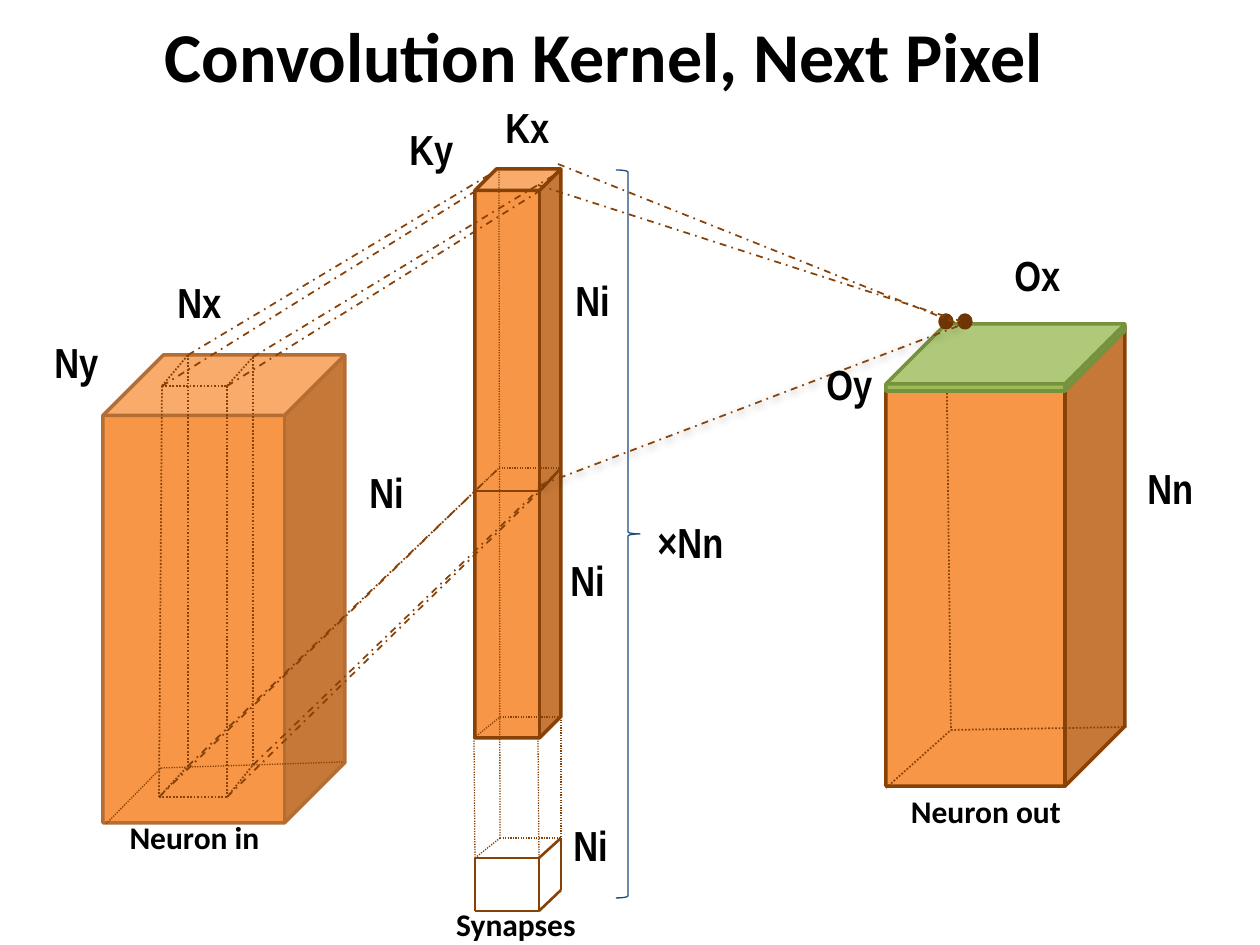
from itertools import pairwise

from lxml.etree import SubElement
from pptx import Presentation
from pptx.dml.color import RGBColor
from pptx.enum.dml import MSO_LINE_DASH_STYLE as DASH
from pptx.enum.shapes import MSO_CONNECTOR, MSO_SHAPE as SHAPE
from pptx.enum.text import MSO_ANCHOR, MSO_AUTO_SIZE, PP_ALIGN
from pptx.oxml.ns import qn
from pptx.util import Pt

PX = 914400 / 126
BROWN, ORANGE, BLACK = "884106", "F79646", "000000"

# kind, box (left, top, width, height), fill, line colour, line width, adjustments
SOLIDS = [
    (SHAPE.CUBE, (103, 355, 242, 468), ORANGE, "B46D33", 2, [0.25]),
    (SHAPE.CUBE, (475, 169, 86, 569), ORANGE, BROWN, 2, [0.25]),
    (SHAPE.RIGHT_BRACE, (616, 170, 24, 728), None, "1F497D", 0.75, [0.083, 0.5]),
    (SHAPE.CUBE, (886, 326, 239, 460), ORANGE, BROWN, 2, [0.25]),
]
OUTPUT_LAYER = (SHAPE.CUBE, (886, 324, 239, 67), "9BBB59", "76923C", 2, [0.895])
PIXELS = [(SHAPE.FLOWCHART_CONNECTOR, (left, 316, 10, 11), "6F3505", "6F3505", 3, [])
          for left in (941, 960)]

# Corners run front left, front right, back right, back left
FIELD_TOP = [(162, 386), (227, 386), (253, 357), (188, 355)]
FIELD_BOTTOM = [(159, 797), (227, 797), (253, 765), (188, 766)]
KERNEL_TOP = [(474, 192), (538, 192), (561, 171), (499, 169)]
KERNEL_SPLIT = [(475, 491), (540, 491), (561, 468), (499, 468)]
KERNEL_BOTTOM = [(474, 738), (538, 738), (561, 717), (500, 717)]
LAST_TOP = [(475, 858), (539, 858), (561, 838), (500, 838)]
LAST_BOTTOM = [(475, 911), (539, 911), (561, 890)]


def front(corners):
    return corners[:3]


def back(corners):
    return [corners[0], corners[3], corners[2]]


# line width, dash, chains of points
LINES = [
    (0.75, DASH.ROUND_DOT, [
        [(106, 824), (161, 768), (343, 762)],
        back(KERNEL_SPLIT), back(KERNEL_BOTTOM), back(LAST_TOP),
        [KERNEL_TOP[3], LAST_TOP[3]],
        *zip(front(KERNEL_BOTTOM), front(LAST_TOP)),
    ]),
    (1, DASH.ROUND_DOT, [
        front(FIELD_TOP), FIELD_TOP[::3], front(FIELD_BOTTOM), FIELD_BOTTOM[::3],
        *zip(FIELD_TOP, FIELD_BOTTOM),
        [(946, 320), (951, 730)],
        [(886, 788), (951, 730), (1128, 727)],
    ]),
    (1, DASH.DASH_DOT, [
        *zip(FIELD_TOP, KERNEL_TOP),
        *zip(FIELD_BOTTOM, KERNEL_SPLIT),
    ]),
    (1.5, DASH.SOLID, [
        front(KERNEL_SPLIT), front(LAST_TOP), LAST_BOTTOM,
        *zip(front(LAST_TOP), LAST_BOTTOM),
    ]),
]
OUTPUT_RAYS = [[(558, 164), (961, 325)], [(538, 185), (960, 321)]]
SHADOWED_RAY = [(541, 485), (961, 325)]

# text, box, size
HEADINGS = [
    ("Neuron out", (897, 779, 178, 57), 18),
    ("Synapses", (431, 892, 170, 37), 18),
    ("Neuron in", (105, 805, 179, 48), 18),
    ("Convolution Kernel, Next Pixel", (120, 0, 968, 84), 40),
]
# text, left, top, width
DIMENSIONS = [
    ("Ny", 42, 330, 71), ("Nx", 165, 270, 71), ("Ni", 357, 460, 60),
    ("Ky", 397, 117, 71), ("Kx", 493, 95, 71), ("Ni", 563, 268, 60),
    ("Ni", 558, 548, 60), ("Ni", 561, 813, 60), ("×Nn", 645, 510, 92),
    ("Oy", 814, 352, 72), ("Ox", 1002, 243, 72), ("Nn", 1135, 456, 72),
]
DIMENSION_HEIGHT = 63


def emu(lengths):
    return [round(length * PX) for length in lengths]


def rgb(code):
    return RGBColor.from_string(code)


def add_solid(slide, kind, box, fill, line_color, line_width, adjustments):
    shape = slide.shapes.add_shape(kind, *emu(box))
    shape.shadow.inherit = False
    for index, value in enumerate(adjustments):
        shape.adjustments[index] = value
    if fill:
        shape.fill.solid()
        shape.fill.fore_color.rgb = rgb(fill)
    else:
        shape.fill.background()
    shape.line.color.rgb = rgb(line_color)
    shape.line.width = Pt(line_width)


def add_chain(slide, points, width, dash, shadow=False):
    """Join each point to the next with a straight line."""
    for start, end in pairwise(points):
        line = slide.shapes.add_connector(MSO_CONNECTOR.STRAIGHT, *emu(start + end))
        line.line.color.rgb = rgb(BROWN)
        line.line.width = Pt(width)
        line.line.dash_style = dash
        effects = SubElement(line._element.spPr, qn("a:effectLst"))
        if shadow:
            outer = SubElement(effects, qn("a:outerShdw"), blurRad=str(Pt(4.5)),
                               dist=str(Pt(1.5)), dir="5400000", rotWithShape="0")
            color = SubElement(outer, qn("a:srgbClr"), val=BLACK)
            SubElement(color, qn("a:alpha"), val="50000")


def add_text(slide, text, box, size, font_name, wrap):
    text_box = slide.shapes.add_textbox(*emu(box))
    frame = text_box.text_frame
    frame.text = text
    frame.word_wrap = wrap
    frame.vertical_anchor = MSO_ANCHOR.TOP
    paragraph = frame.paragraphs[0]
    font = paragraph.runs[0].font
    font.name, font.size, font.bold = font_name, Pt(size), True
    font.color.rgb = rgb(BLACK)
    return frame


def add_heading(slide, text, box, size):
    frame = add_text(slide, text, box, size, "Calibri", True)
    frame.margin_top = frame.margin_bottom = Pt(7.2)
    frame.paragraphs[0].alignment = PP_ALIGN.CENTER


def add_dimension(slide, text, left, top, width):
    box = (left, top, width, DIMENSION_HEIGHT)
    frame = add_text(slide, text, box, 24, "Arial Narrow", False)
    frame.auto_size = MSO_AUTO_SIZE.SHAPE_TO_FIT_TEXT


def main():
    presentation = Presentation()
    presentation.slide_width, presentation.slide_height = emu((1260, 945))
    slide = presentation.slides.add_slide(presentation.slide_layouts[6])
    for solid in SOLIDS:
        add_solid(slide, *solid)
    for width, dash, chains in LINES:
        for chain in chains:
            add_chain(slide, chain, width, dash)
    for solid in [OUTPUT_LAYER, *PIXELS]:
        add_solid(slide, *solid)
    for ray in OUTPUT_RAYS:
        add_chain(slide, ray, 1, DASH.DASH_DOT)
    add_chain(slide, SHADOWED_RAY, 1, DASH.DASH_DOT, shadow=True)
    for heading in HEADINGS:
        add_heading(slide, *heading)
    for dimension in DIMENSIONS:
        add_dimension(slide, *dimension)
    presentation.save("out.pptx")


if __name__ == "__main__":
    main()
